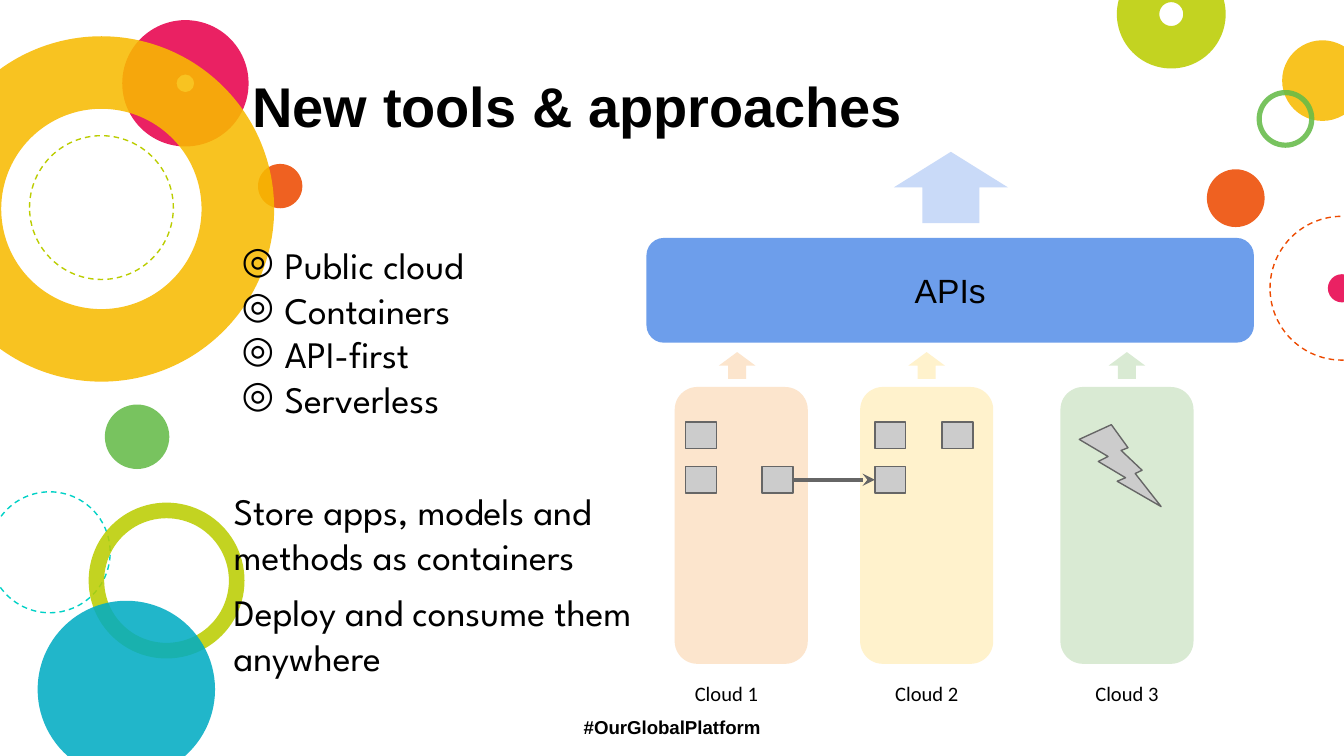
from lxml import etree
from pptx import Presentation
from pptx.dml.color import RGBColor
from pptx.enum.dml import MSO_LINE
from pptx.enum.shapes import MSO_CONNECTOR, MSO_SHAPE
from pptx.enum.text import MSO_ANCHOR, PP_ALIGN
from pptx.oxml.ns import qn
from pptx.util import Inches, Pt

OVAL, DONUT = MSO_SHAPE.OVAL, MSO_SHAPE.DONUT
RECTANGLE, ROUNDED = MSO_SHAPE.RECTANGLE, MSO_SHAPE.ROUNDED_RECTANGLE
API_SHAPE, BOLT = MSO_SHAPE.FLOWCHART_ALTERNATE_PROCESS, MSO_SHAPE.LIGHTNING_BOLT
UP_ARROW, STRAIGHT = MSO_SHAPE.UP_ARROW, MSO_CONNECTOR.STRAIGHT
DASH = MSO_LINE.DASH
LEFT, CENTER = PP_ALIGN.LEFT, PP_ALIGN.CENTER
TOP, MIDDLE, BOTTOM = MSO_ANCHOR.TOP, MSO_ANCHOR.MIDDLE, MSO_ANCHOR.BOTTOM

BLACK = RGBColor(0x00, 0x00, 0x00)
ORANGE = RGBColor(0xED, 0x4A, 0x00)
GREEN = RGBColor(0x65, 0xBB, 0x48)
TURQUOISE = RGBColor(0x00, 0xD1, 0xC6)
PINK = RGBColor(0xE8, 0x00, 0x4C)
LIME = RGBColor(0xBB, 0xCD, 0x00)
YELLOW = RGBColor(0xF8, 0xBB, 0x00)
TEAL = RGBColor(0x00, 0xAC, 0xC3)
PALE_ORANGE = RGBColor(0xFC, 0xE5, 0xCD)
PALE_YELLOW = RGBColor(0xFF, 0xF2, 0xCC)
PALE_GREEN = RGBColor(0xD9, 0xEA, 0xD3)
PALE_BLUE = RGBColor(0xC9, 0xDA, 0xF8)
BLUE = RGBColor(0x6D, 0x9E, 0xEB)
GRAY = RGBColor(0xCC, 0xCC, 0xCC)
DARK_GRAY = RGBColor(0x66, 0x66, 0x66)

BODY_FONT = "League Spartan"
TITLE = "New tools & approaches"
HASHTAG = "#OurGlobalPlatform"
TOOLS = ["Public cloud", "Containers", "API-first", "Serverless"]
GOALS = ["Store apps, models and methods as containers",
         "Deploy and consume them anywhere"]

# style, left, top, diameter, colour, ring thickness (donuts only)
CIRCLES = [
    ("dashed", 9.45, 1.61, 1.07, ORANGE, None),
    ("disc", 0.78, 3.01, 0.48, GREEN, None),
    ("dashed", -0.08, 3.66, 0.9, TURQUOISE, None),
    ("donut", 0.91, 0.15, 0.94, PINK, 0.43),
    ("donut", 0.66, 3.74, 1.16, LIME, 0.1),
    ("disc", 1.92, 1.22, 0.33, ORANGE, None),
    ("disc", 9.54, 0.3, 0.6, YELLOW, None),
    ("donut", 9.35, 0.67, 0.43, GREEN, 0.09),
    ("disc", 8.98, 1.26, 0.43, ORANGE, None),
    ("donut", 8.31, -0.3, 0.81, LIME, 0.39),
    ("disc", 9.88, 2.04, 0.21, PINK, None),
    ("donut", -0.53, 0.27, 2.57, YELLOW, 0.21),
    ("disc", 0.28, 4.47, 1.32, TEAL, None),
    ("dashed", 0.22, 1.01, 1.07, LIME, None),
]

# label, panel left, arrow left, colour
CLOUDS = [
    ("Cloud 1", 5.02, 5.35, PALE_ORANGE),
    ("Cloud 2", 6.4, 6.76, PALE_YELLOW),
    ("Cloud 3", 7.89, 8.25, PALE_GREEN),
]
LABEL_LEFT, LABEL_STEP = 5.1, 1.49

UPPER_ROW, LOWER_ROW = 3.14, 3.47
CONTAINERS = [(5.1, UPPER_ROW), (5.1, LOWER_ROW), (7.01, UPPER_ROW), (6.51, UPPER_ROW)]
LINKED_CONTAINERS = [(5.67, LOWER_ROW), (6.51, LOWER_ROW)]

prs = Presentation()
prs.slide_width = Inches(10)
prs.slide_height = prs.slide_width * 9 // 16
slide = prs.slides.add_slide(prs.slide_layouts[6])


def add_figure(kind, left, top, width, height, fill=None, line=None, adjust=None):
    figure = slide.shapes.add_shape(
        kind, Inches(left), Inches(top), Inches(width), Inches(height))
    figure.shadow.inherit = False
    if fill is None:
        figure.fill.background()
    else:
        figure.fill.solid()
        figure.fill.fore_color.rgb = fill
    if line is None:
        figure.line.fill.background()
    else:
        figure.line.color.rgb = line
        figure.line.width = Pt(0.75)
    if adjust is not None:
        figure.adjustments[0] = adjust
    return figure


def add_circle(style, left, top, size, color, ring):
    if style == "dashed":
        circle = add_figure(OVAL, left, top, size, size, line=color)
        circle.line.dash_style = DASH
        return
    kind = DONUT if style == "donut" else OVAL
    circle = add_figure(kind, left, top, size, size, color, adjust=ring)
    solid_color = circle.fill._xPr.find(qn("a:solidFill"))[0]
    etree.SubElement(solid_color, qn("a:alpha"), val="87000")


def write(holder, lines, size, font, bold=False, align=LEFT, anchor=TOP, inset=0.1):
    """Fill a shape or text box with uniformly formatted paragraphs."""
    frame = holder.text_frame
    frame.word_wrap = True
    frame.vertical_anchor = anchor
    frame.margin_left = frame.margin_right = Inches(inset)
    frame.margin_top = frame.margin_bottom = Inches(inset)
    frame.text = "\n".join(lines)
    for paragraph in frame.paragraphs:
        paragraph.alignment = align
        run_font = paragraph.runs[0].font
        run_font.size, run_font.name, run_font.bold = Pt(size), font, bold
        run_font.color.rgb = BLACK
    return frame.paragraphs


def add_text(left, top, width, height, lines, size, font, **options):
    box = slide.shapes.add_textbox(
        Inches(left), Inches(top), Inches(width), Inches(height))
    return write(box, lines, size, font, **options)


def add_bullet(paragraph):
    properties = paragraph._p.get_or_add_pPr()
    properties.set("marL", str(Inches(0.38)))
    properties.set("indent", str(Inches(-0.32)))
    etree.SubElement(properties, qn("a:buFont"), typeface=BODY_FONT)
    etree.SubElement(properties, qn("a:buChar"), char="◎")


def add_link(source, target):
    link = slide.shapes.add_connector(STRAIGHT, 0, 0, 0, 0)
    link.begin_connect(source, 3)
    link.end_connect(target, 1)
    link.line.color.rgb = DARK_GRAY
    link.line.width = Pt(2.25)
    etree.SubElement(link.line._get_or_add_ln(), qn("a:tailEnd"), type="stealth")
    etree.SubElement(link._element.spPr, qn("a:effectLst"))


add_text(4.19, 5.23, 1.62, 0.36, [HASHTAG], 10, "Arial",
         bold=True, align=CENTER, anchor=MIDDLE)
for circle_spec in CIRCLES:
    add_circle(*circle_spec)

for index, (label, panel_left, arrow_left, color) in enumerate(CLOUDS):
    add_figure(ROUNDED, panel_left, 2.88, 0.99, 2.06, color, adjust=0.17)
    add_figure(UP_ARROW, arrow_left, 2.62, 0.27, 0.2, color)
    add_text(LABEL_LEFT + index * LABEL_STEP, 5, 1.44, 0.31, [label], 11, "Calibri",
             inset=0.07)

add_text(1.78, 0.43, 7.2, 0.7, [TITLE], 30, "Arial", bold=True, anchor=BOTTOM)

body = add_text(1.64, 1.7, 3.43, 3.69, TOOLS + GOALS, 20, BODY_FONT)
for paragraph in body:
    paragraph.space_before = Pt(0)
first_goal, second_goal = body[len(TOOLS):]
body[0].space_before = second_goal.space_before = Pt(6)
first_goal.space_before = Pt(36)
for tool in body[:len(TOOLS)]:
    add_bullet(tool)

api_bar = add_figure(API_SHAPE, 4.81, 1.77, 4.52, 0.78, BLUE)
write(api_bar, ["APIs"], 18, "Arial", align=CENTER, anchor=MIDDLE, inset=0.07)
add_figure(UP_ARROW, 6.65, 1.13, 0.85, 0.53, PALE_BLUE)

for left, top in CONTAINERS:
    add_figure(RECTANGLE, left, top, 0.23, 0.2, GRAY, DARK_GRAY)
add_link(*[add_figure(RECTANGLE, left, top, 0.23, 0.2, GRAY, DARK_GRAY)
           for left, top in LINKED_CONTAINERS])
add_figure(BOLT, 8.03, 3.16, 0.61, 0.61, GRAY, DARK_GRAY)

prs.save("out.pptx")
